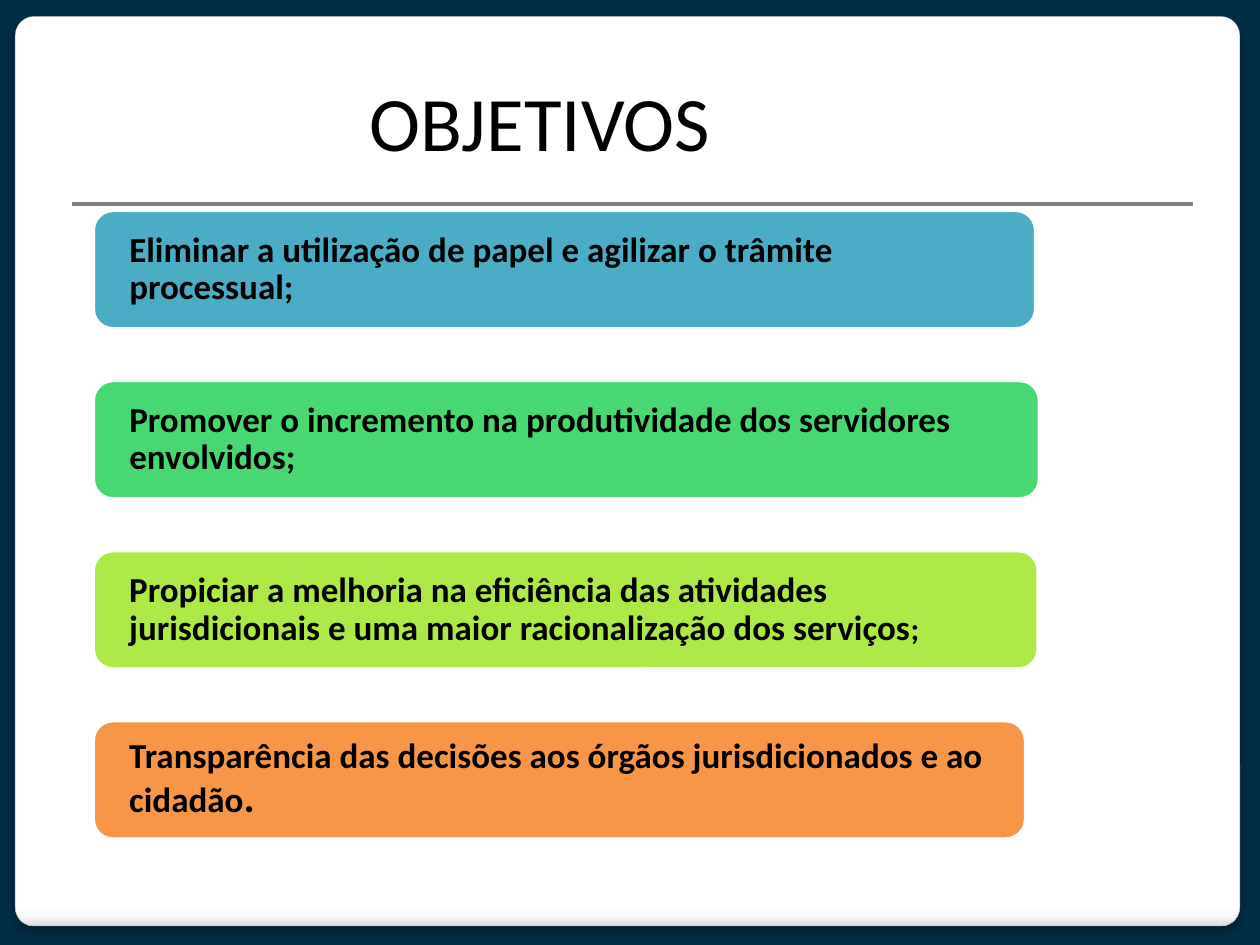
import pptx
import pptx.util
import pptx.dml.color
import pptx.enum.shapes
import pptx.enum.text
import pptx.oxml
import pptx.oxml.ns
from pptx.util import Inches

COLORS = {
    "background": "002D46",
    "card": "FFFFFF",
    "card_border": "A4A4A4",
    "rule": "808080",
    "text": "000000",
    "blue": "4BACC6",
    "green": "47D872",
    "lime": "ACE946",
    "orange": "F79646",
}
CARD_STOPS = [(0, "FFFFFF"), (98, "FFFFFF"), (99, "F7F7F7"), (100, "DADADA")]
NAMESPACE = pptx.oxml.ns.nsdecls("a")


def rgb(name):
    return pptx.dml.color.RGBColor.from_string(COLORS[name])


def add_text(para, text, size=20, bold=False, color="text", font="Calibri"):
    span = para.add_run()
    span.text = text
    span.font.name = font
    span.font.size = pptx.util.Pt(size)
    span.font.bold = bold
    span.font.color.rgb = rgb(color)


deck = pptx.Presentation()
deck.slide_width = Inches(10)
deck.slide_height = Inches(7.5)
page = deck.slides.add_slide(deck.slide_layouts[5])
page.background.fill.solid()
page.background.fill.fore_color.rgb = rgb("background")
rounded = pptx.enum.shapes.MSO_SHAPE.ROUNDED_RECTANGLE

# White card with a shaded lower edge and a soft shadow
card = page.shapes.add_shape(rounded, Inches(0.12), Inches(0.13), Inches(9.72), Inches(7.22))
card.adjustments[0] = 0.021
card.line.color.rgb = rgb("card_border")
card.line.width = pptx.util.Pt(0.16)
stops = "".join(
    f'<a:gs pos="{position * 1000}"><a:srgbClr val="{color}"/></a:gs>'
    for position, color in CARD_STOPS
)
gradient = pptx.oxml.parse_xml(
    f'<a:gradFill {NAMESPACE} rotWithShape="1"><a:gsLst>{stops}</a:gsLst>'
    '<a:lin ang="5400000" scaled="0"/></a:gradFill>'
)
card_properties = card.element.spPr
card_properties.find(pptx.oxml.ns.qn("a:prstGeom")).addnext(gradient)
card_properties.append(pptx.oxml.parse_xml(
    f'<a:effectLst {NAMESPACE}><a:outerShdw blurRad="{pptx.util.Pt(6)}" '
    f'dist="{pptx.util.Pt(4)}" dir="5400000" algn="t" rotWithShape="0">'
    '<a:srgbClr val="000000"><a:alpha val="25000"/></a:srgbClr>'
    '</a:outerShdw></a:effectLst>'
))

# Rule below the title
rule = page.shapes.add_connector(
    pptx.enum.shapes.MSO_CONNECTOR.STRAIGHT,
    Inches(0.57), Inches(1.62), Inches(9.47), Inches(1.62),
)
rule.line.color.rgb = rgb("rule")
rule.line.width = pptx.util.Pt(2.25)
rule.element.spPr.append(pptx.oxml.parse_xml(f"<a:effectLst {NAMESPACE}/>"))

# Objectives: fill, width, text, closing mark and its size
objectives = [
    ("blue", 7.48, "Eliminar a utilização de papel e agilizar o trâmite processual", ";", 20),
    ("green", 7.51, "Promover o incremento na produtividade dos servidores envolvidos", ";", 20),
    ("lime", 7.5, "Propiciar a melhoria na eficiência das atividades jurisdicionais "
     "e uma maior racionalização dos serviços", ";", 18),
    ("orange", 7.4, "Transparência das decisões aos órgãos jurisdicionados e ao cidadão",
     ".", 24),
]
for index, (fill, width, text, mark, mark_size) in enumerate(objectives):
    box = page.shapes.add_shape(
        rounded, Inches(0.74), Inches(1.67 + 1.35 * index), Inches(width), Inches(0.94)
    )
    box.shadow.inherit = False
    box.fill.solid()
    box.fill.fore_color.rgb = rgb(fill)
    box.line.color.rgb = rgb("card")
    box.line.width = pptx.util.Pt(2)
    frame = box.text_frame
    frame.word_wrap = True
    frame.vertical_anchor = pptx.enum.text.MSO_ANCHOR.MIDDLE
    frame.margin_left = frame.margin_right = Inches(0.24)
    frame.margin_top = frame.margin_bottom = 0
    para = frame.paragraphs[0]
    para.alignment = pptx.enum.text.PP_ALIGN.LEFT
    para.line_spacing = 0.9
    add_text(para, text, bold=True)
    add_text(para, mark, size=mark_size, bold=True)

# Title, brought in front of the card
title = page.shapes.title
title.left, title.top = Inches(0.38), Inches(0.38)
title.width, title.height = Inches(7.81), Inches(1.15)
title.text_frame.vertical_anchor = pptx.enum.text.MSO_ANCHOR.MIDDLE
title_para = title.text_frame.paragraphs[0]
title_para.alignment = pptx.enum.text.PP_ALIGN.CENTER
add_text(title_para, "OBJETIVOS", size=44)
title.element.getparent().append(title.element)

deck.save("out.pptx")
